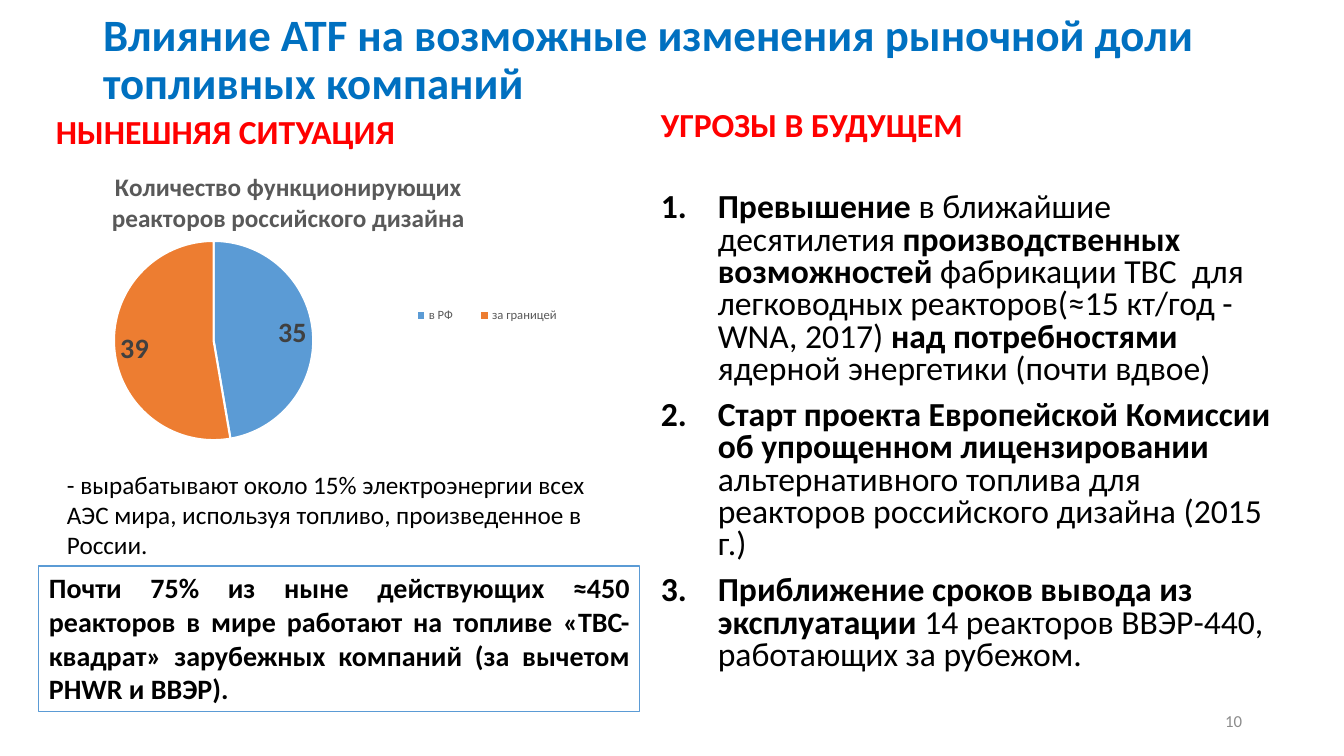
from lxml import etree
from pptx import Presentation
from pptx.chart.data import CategoryChartData
from pptx.dml.color import RGBColor
from pptx.enum.chart import XL_CHART_TYPE, XL_LABEL_POSITION, XL_LEGEND_POSITION
from pptx.enum.shapes import MSO_SHAPE
from pptx.enum.text import MSO_ANCHOR, PP_ALIGN
from pptx.oxml.ns import qn
from pptx.util import Pt

PIE = XL_CHART_TYPE.PIE
INSIDE = XL_LABEL_POSITION.INSIDE_END
BOTTOM = XL_LEGEND_POSITION.BOTTOM
RECT = MSO_SHAPE.RECTANGLE
TOP, MIDDLE = MSO_ANCHOR.TOP, MSO_ANCHOR.MIDDLE
LEFT, RIGHT, JUSTIFY = PP_ALIGN.LEFT, PP_ALIGN.RIGHT, PP_ALIGN.JUSTIFY
PX = 914400 / 100.8
FONT = "Calibri"
COLORS = {
    "title": "0070C0", "head": "FF0000", "text": "000000", "blue": "5B9BD5",
    "orange": "ED7D31", "white": "FFFFFF", "gray": "595959",
    "label": "404040", "number": "8C8C8C",
}
RGB = {name: RGBColor.from_string(code) for name, code in COLORS.items()}


def style(font, size, color, bold=False):
    font.name, font.size, font.bold = FONT, Pt(size), bold
    font.color.rgb = RGB[color]


def place(node, index, **parts):
    """Set a manual layout, in shares of the chart's size."""
    for old in node.findall(qn("c:layout")):
        node.remove(old)
    layout = etree.Element(qn("c:layout"))
    manual = etree.SubElement(layout, qn("c:manualLayout"))
    for tag, value in parts.items():
        etree.SubElement(manual, qn("c:" + tag)).set("val", str(value))
    node.insert(index, layout)


prs = Presentation()
prs.slide_width, prs.slide_height = round(1344 * PX), round(756 * PX)
slide = prs.slides.add_slide(prs.slide_layouts[5])
shapes = slide.shapes

# Title, headings, note, framed fact and slide number
texts = [
    ("title", (93, 3, 1159, 116), 32, "title", True, LEFT, MIDDLE,
     "Влияние ATF на возможные изменения рыночной доли топливных компаний"),
    ("box", (46, 106, 492, 50), 24, "head", True, LEFT, TOP, "НЫНЕШНЯЯ СИТУАЦИЯ"),
    ("box", (57, 464, 563, 102), 18, "text", False, LEFT, TOP,
     "- вырабатывают около 15% электроэнергии всех АЭС мира, "
     "используя топливо, произведенное в России."),
    ("frame", (39, 566, 601, 146), 20, "text", True, JUSTIFY, TOP,
     "Почти 75% из ныне действующих ≈450 реакторов в мире работают на топливе "
     "«ТВС-квадрат» зарубежных компаний (за вычетом PHWR и ВВЭР)."),
    ("box", (950, 701, 302, 40), 12, "number", False, RIGHT, MIDDLE, "10"),
]
for kind, area, size, color, bold, align, anchor, words in texts:
    spot = [round(n * PX) for n in area]
    if kind == "title":
        shape = shapes.title
        shape.left, shape.top, shape.width, shape.height = spot
    elif kind == "frame":
        shape = shapes.add_shape(RECT, *spot)
        shape.shadow.inherit = False
        shape.fill.background()
        shape.line.color.rgb = RGB["blue"]
        shape.line.width = Pt(0.75)
    else:
        shape = shapes.add_textbox(*spot)
    frame = shape.text_frame
    frame.word_wrap = True
    frame.vertical_anchor = anchor
    para = frame.paragraphs[0]
    para.alignment = align
    if kind == "title":
        para.line_spacing = 0.9
    run = para.add_run()
    run.text = words
    style(run.font, size, color, bold)

# Threats: heading and numbered list, as (text, bold) runs
threats = [
    [("УГРОЗЫ В БУДУЩЕМ", True)],
    [("Превышение", True), (" в ближайшие десятилетия ", False),
     ("производственных возможностей", True),
     (" фабрикации ТВС  для легководных реакторов(≈15 кт/год - WNA, 2017) ", False),
     ("над потребностями ", True), ("ядерной энергетики (почти вдвое)", False)],
    [("Старт проекта Европейской Комиссии об упрощенном лицензировании ", True),
     ("альтернативного топлива для реакторов российского дизайна (2015 г.)", False)],
    [("Приближение сроков вывода из эксплуатации ", True),
     ("14 реакторов ВВЭР-440, работающих за рубежом.", False)],
]
box = shapes.add_textbox(*[round(n * PX) for n in (651, 107, 646, 631)])
frame = box.text_frame
frame.word_wrap = True
for i, runs in enumerate(threats):
    para = frame.add_paragraph() if i else frame.paragraphs[0]
    para.line_spacing = 0.8
    para.space_before = Pt(35 if i == 1 else 10)
    if i:
        props = para._p.get_or_add_pPr()
        props.set("marL", str(round(57 * PX)))
        props.set("indent", str(round(-57 * PX)))
        etree.SubElement(props, qn("a:buFont")).set("typeface", "+mj-lt")
        etree.SubElement(props, qn("a:buAutoNum")).set("type", "arabicPeriod")
    for words, bold in runs:
        run = para.add_run()
        run.text = words
        style(run.font, 24, "text" if i else "head", bold)

# Pie of reactors
data = CategoryChartData()
data.categories = ["в РФ", "за границей"]
data.add_series("Реакторы", (35, 39))
spot = [round(n * PX) for n in (39, 156, 582, 293)]
chart = shapes.add_chart(PIE, *spot, data).chart
style(chart.font, 10, "text")
plot = chart.plots[0]
plot.vary_by_categories = True
for i, color in enumerate(("blue", "orange")):
    look = plot.series[0].points[i].format
    look.fill.solid()
    look.fill.fore_color.rgb = RGB[color]
    look.line.color.rgb = RGB["white"]
    look.line.width = Pt(1.5)
plot.has_data_labels = True
labels = plot.data_labels
labels.show_value = True
labels.show_percentage = False
labels.position = INSIDE
style(labels.font, 20, "label", True)

# Chart title and legend
chart.has_title = True
frame = chart.chart_title.text_frame
for i, words in enumerate(("Количество функционирующих", "реакторов российского дизайна")):
    para = frame.add_paragraph() if i else frame.paragraphs[0]
    run = para.add_run()
    run.text = words
    style(run.font, 18, "gray", True)
chart.has_legend = True
legend = chart.legend
legend.position = BOTTOM
legend.include_in_layout = False
style(legend.font, 9, "gray")

# Places inside the chart
area = chart._chartSpace.chart.plotArea
place(area, 0, layoutTarget="inner", xMode="edge", yMode="edge", x=0.08, y=0.29, w=0.44, h=0.68)
place(chart.chart_title._element, 1, xMode="edge", yMode="edge", x=0.12, y=0.04)
place(legend._element, 1, xMode="edge", yMode="edge", x=0.61, y=0.5, w=0.32, h=0.09)

prs.save("out.pptx")
